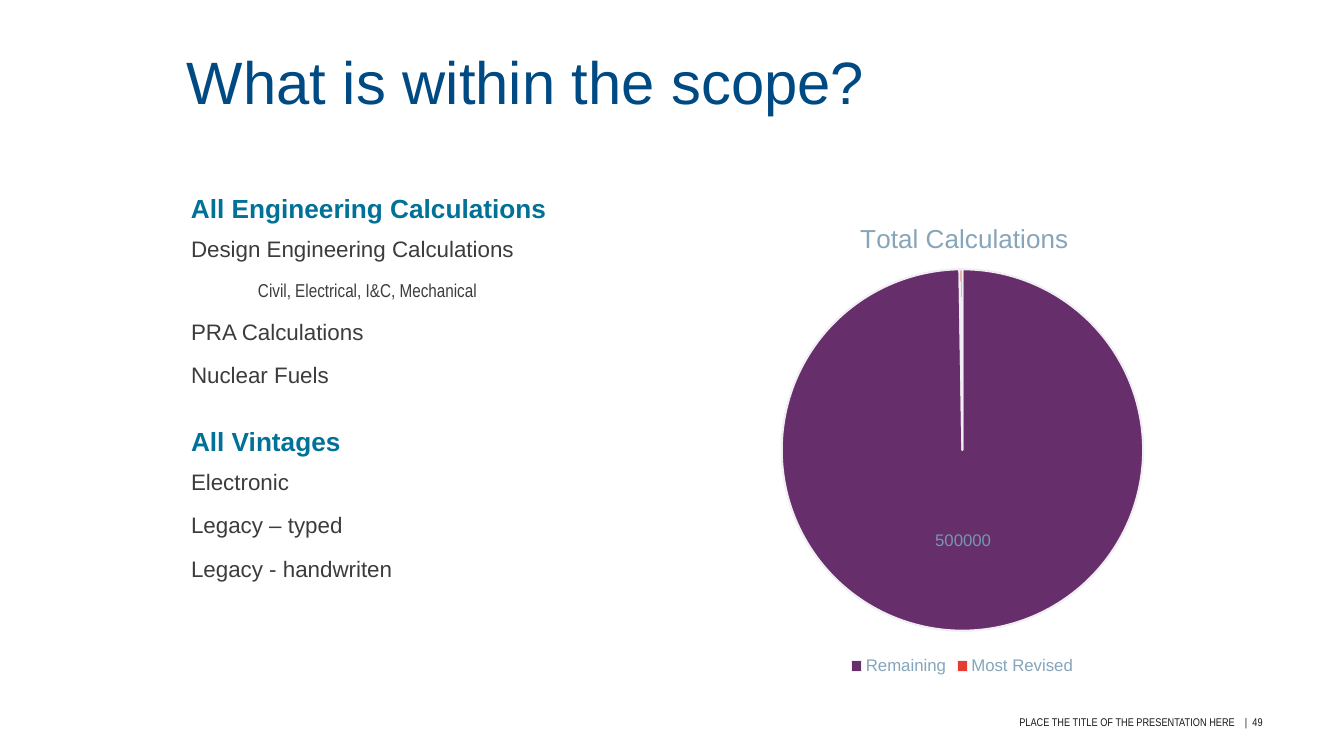
from lxml.etree import fromstring
from pptx import Presentation
from pptx.chart.data import CategoryChartData
from pptx.dml.color import RGBColor
from pptx.enum.chart import XL_CHART_TYPE, XL_LABEL_POSITION, XL_LEGEND_POSITION
from pptx.enum.text import PP_ALIGN
from pptx.util import Pt

PX = 914400 / 100.8
CHART_NS = "http://schemas.openxmlformats.org/drawingml/2006/chart"
BODY, HEADING = "3C3C3C", "007197"
LEFT = 181


def px(value):
    """Turn pixels into EMU."""
    return round(value * PX)


def color(code):
    """Turn a hex string into a colour."""
    return RGBColor.from_string(code)


def style(font, size, code, name="Arial", bold=False):
    """Set size, colour, typeface and weight of a font."""
    font.size, font.name, font.bold = Pt(size), name, bold
    font.color.rgb = color(code)


def add_box(page, left, top, width, height, margin_left=10, margin_right=10):
    """Add an empty wrapping text box and return its text frame."""
    box = page.shapes.add_textbox(px(left), px(top), px(width), px(height))
    frame = box.text_frame
    frame.word_wrap = True
    frame.margin_left, frame.margin_right = px(margin_left), px(margin_right)
    return frame


def write(para, text, size, code, name="Arial", bold=False):
    """Fill a paragraph with text in one font."""
    para.text = text
    style(para.font, size, code, name, bold)


def add_section(page, top, heading, width, items):
    """Add a bold heading and the list of (text, level) items below it."""
    title = add_box(page, LEFT, top, width, 42)
    write(title.paragraphs[0], heading, 18.7, HEADING, bold=True)
    frame = add_box(page, LEFT, top + 43, 455, 180)
    for index, (text, level) in enumerate(items):
        para = frame.add_paragraph() if index else frame.paragraphs[0]
        para.space_before, para.space_after = Pt(4), Pt(8)
        if level:
            para.level = level
            para._p.get_or_add_pPr().set("marL", str(px(67)))
            write(para, text, 13.3, BODY, "Arial Narrow")
        else:
            write(para, text, 16, BODY)


def place(parent, left, top, width=None, height=None):
    """Fix a chart part at fractions of the chart area."""
    values = {"x": left, "y": top, "w": width, "h": height}
    sizes = "".join(f'<c:{key} val="{value}"/>' for key, value in values.items() if value)
    target = '<c:layoutTarget val="inner"/>' if width else ""
    modes = '<c:xMode val="edge"/><c:yMode val="edge"/>'
    layout = fromstring(
        f'<c:layout xmlns:c="{CHART_NS}"><c:manualLayout>'
        f"{target}{modes}{sizes}</c:manualLayout></c:layout>"
    )
    for old in parent.findall(f"{{{CHART_NS}}}layout"):
        parent.remove(old)
    text = parent.find(f"{{{CHART_NS}}}tx")
    parent.insert(0 if text is None else 1, layout)


def add_pie(page):
    """Add the pie chart of total calculations."""
    data = CategoryChartData()
    data.categories = ["Remaining", "Most Revised"]
    data.add_series("Series 1", [500000, 1300])
    chart = page.shapes.add_chart(
        XL_CHART_TYPE.PIE, px(648), px(197), px(629), px(482), data
    ).chart
    style(chart.font, 10, "4F738A")
    chart.has_title = True
    title = chart.chart_title
    write(title.text_frame.paragraphs[0], "Total Calculations", 18.6, "86A5BA")
    place(title._element, 0.33, 0.04)
    chart.has_legend = True
    chart.legend.position = XL_LEGEND_POSITION.BOTTOM
    chart.legend.include_in_layout = False
    style(chart.legend.font, 12, "86A5BA")

    plot = chart.plots[0]
    plot.vary_by_categories = True
    place(chart._chartSpace.chart.plotArea, 0.21, 0.15, 0.58, 0.75)
    series = plot.series[0]
    for index, code in enumerate(["662E6B", "E53E30"]):
        part = series.points[index].format
        part.fill.solid()
        part.fill.fore_color.rgb = color(code)
        part.line.color.rgb = color("F0EEF2")
        part.line.width = Pt(1.5)
    labels = series.data_labels
    labels.show_value = True
    labels.position = XL_LABEL_POSITION.CENTER
    style(labels.font, 12, "7398AF")
    hidden = f'<c:dLbl xmlns:c="{CHART_NS}"><c:idx val="1"/><c:delete val="1"/></c:dLbl>'
    labels._element.insert(0, fromstring(hidden))


def main():
    """Build the slide and save it."""
    deck = Presentation()
    deck.slide_width, deck.slide_height = px(1344), px(756)
    page = deck.slides.add_slide(deck.slide_layouts[6])

    title = add_box(page, 177, 48, 1100, 126).paragraphs[0]
    title.line_spacing = Pt(45.3)
    write(title, "What is within the scope?", 42.7, "004A84")

    add_section(page, 187, "All Engineering Calculations", 432, [
        ("Design Engineering Calculations", 0),
        ("Civil, Electrical, I&C, Mechanical", 1),
        ("PRA Calculations", 0),
        ("Nuclear Fuels", 0),
    ])
    add_section(page, 420, "All Vintages", 221, [
        ("Electronic", 0),
        ("Legacy – typed", 0),
        ("Legacy - handwriten", 0),
    ])
    add_pie(page)

    footer = add_box(page, 813, 710, 425, 40, margin_right=0).paragraphs[0]
    footer.alignment = PP_ALIGN.RIGHT
    write(footer, "PLACE THE TITLE OF THE PRESENTATION HERE ", 8, "181818", "Arial Narrow")
    number = add_box(page, 1245, 710, 41, 40, margin_left=0).paragraphs[0]
    write(number, "|  49", 8, "181818", "Arial Narrow")
    deck.save("out.pptx")


if __name__ == "__main__":
    main()
